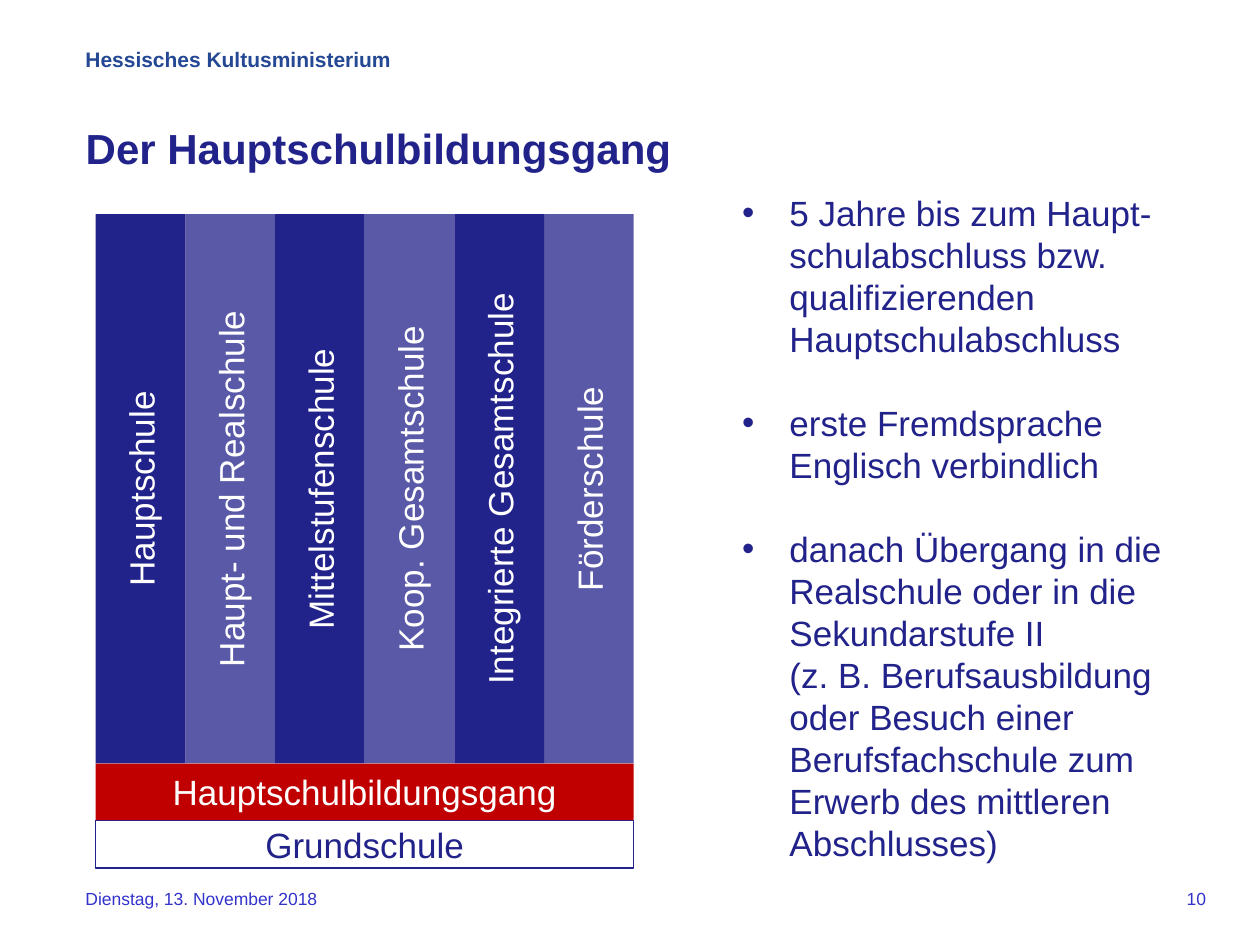
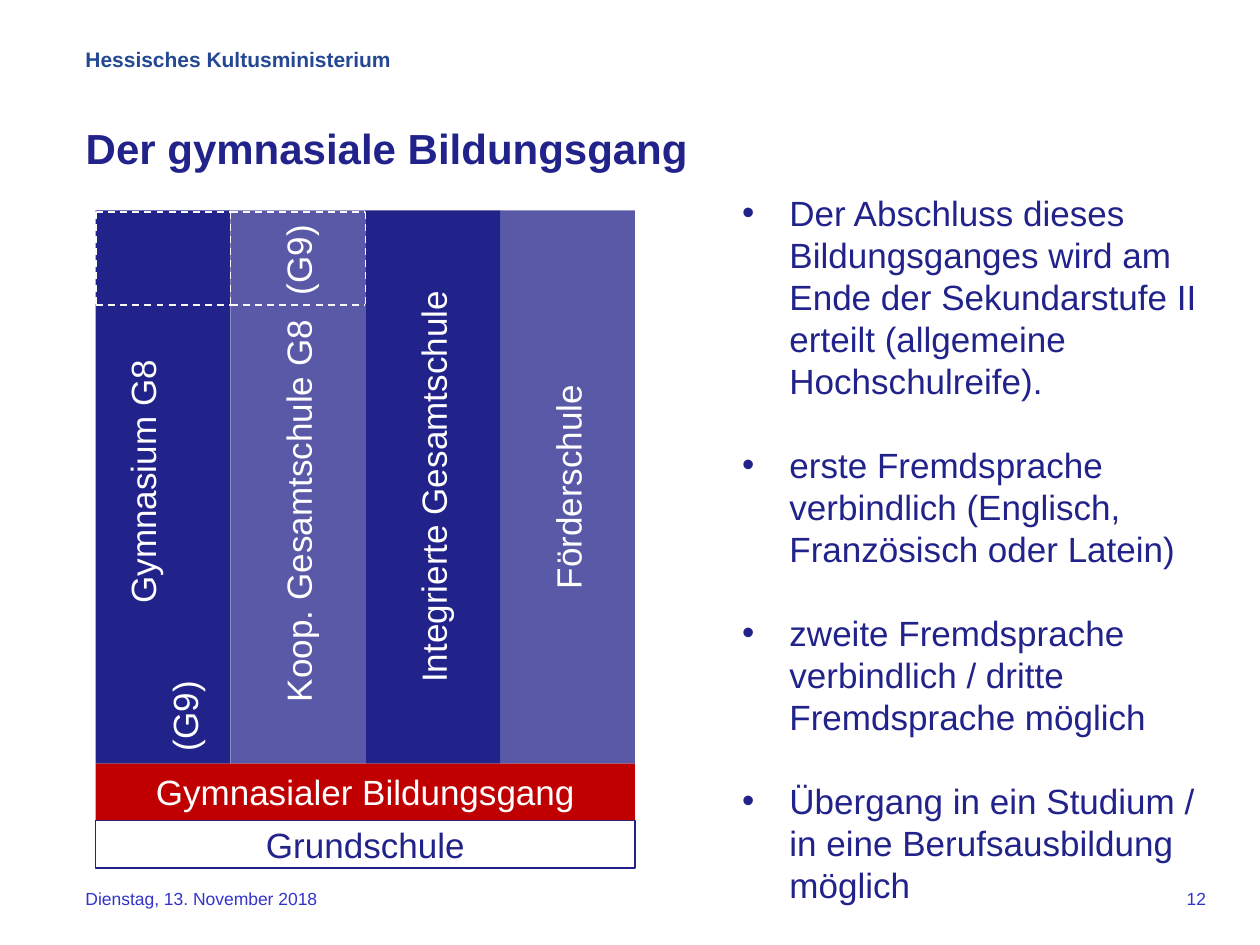
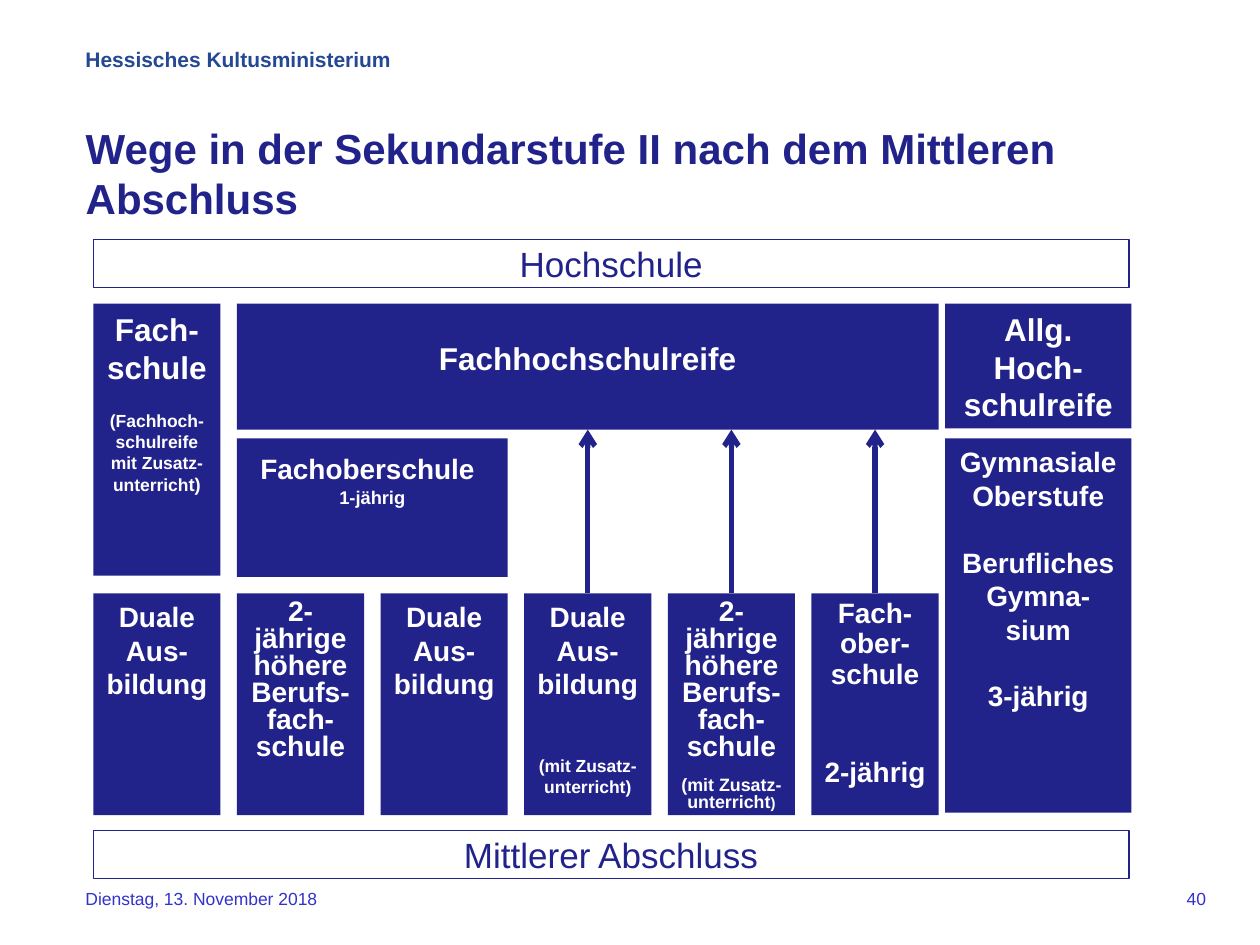
from lxml import etree
from pptx import Presentation
from pptx.dml.color import RGBColor
from pptx.enum.dml import MSO_LINE
from pptx.enum.shapes import MSO_CONNECTOR, MSO_SHAPE
from pptx.enum.text import MSO_ANCHOR, MSO_AUTO_SIZE, PP_ALIGN
from pptx.oxml.ns import qn
from pptx.util import Inches, Pt

LEFT, CENTER, RIGHT = PP_ALIGN.LEFT, PP_ALIGN.CENTER, PP_ALIGN.RIGHT
TOP, MIDDLE = MSO_ANCHOR.TOP, MSO_ANCHOR.MIDDLE
FIXED = MSO_AUTO_SIZE.NONE
RECT = MSO_SHAPE.RECTANGLE
STRAIGHT = MSO_CONNECTOR.STRAIGHT
DASH = MSO_LINE.DASH

HUES = {
    "navy": "22228B",
    "red": "C00000",
    "white": "FFFFFF",
    "head": "244894",
    "foot": "3333CC",
    "dash": "F9F9F9",
}
FONT = "Arial"
BODY = (5.79, 1.47, 3.86, 5.35)


def hue(name):
    return RGBColor.from_string(HUES[name])


def place(shape, box):
    shape.left, shape.top, shape.width, shape.height = map(Inches, box)


def plain(text, size=20):
    return [(0, [(text, size)])]


def set_tabs(para, stops):
    tabs = etree.SubElement(para._p.get_or_add_pPr(), qn("a:tabLst"))
    for stop in stops:
        etree.SubElement(tabs, qn("a:tab"), pos=str(Inches(stop)), algn="l")


def write(frame, paras, color="navy", bold=False, align=LEFT, pitch=None,
          anchor=TOP, stops=()):
    frame.word_wrap = True
    frame.auto_size = FIXED
    frame.vertical_anchor = anchor
    for num, (gap, runs) in enumerate(paras):
        para = frame.add_paragraph() if num else frame.paragraphs[0]
        para.alignment = align
        para.space_before = Pt(gap)
        if pitch:
            para.line_spacing = pitch
        if stops:
            set_tabs(para, stops)
        for text, size in runs:
            for part, line in enumerate(text.split("\n")):
                if part:
                    para.add_line_break()
                run = para.add_run()
                run.text = line
                font = run.font
                font.name, font.size, font.bold = FONT, Pt(size), bold
                font.color.rgb = hue(color)


def label(slide, box, text, size, **style):
    shape = slide.shapes.add_textbox(*map(Inches, box))
    write(shape.text_frame, plain(text, size), **style)


def block(slide, box, paras, fill="navy", edge=None, inset=0.05, **style):
    shape = slide.shapes.add_shape(RECT, *map(Inches, box))
    shape.shadow.inherit = False
    shape.fill.solid()
    shape.fill.fore_color.rgb = hue(fill)
    if edge:
        shape.line.color.rgb = hue(edge)
        shape.line.width = Pt(0.75)
    else:
        shape.line.fill.background()
    shape.text_frame.margin_top = Inches(inset)
    write(shape.text_frame, paras, **{"color": "white", "align": CENTER, **style})
    return shape


def band(slide, box, text):
    block(slide, box, plain(text), "white", "navy", color="navy", anchor=MIDDLE)


def stroke(slide, start, end, color, width):
    line = slide.shapes.add_connector(STRAIGHT, *map(Inches, start + end))
    line.line.color.rgb = hue(color)
    line.line.width = Pt(width)
    etree.SubElement(line.element.spPr, qn("a:effectLst"))
    return line


def dashes(slide, box, cols):
    left, top, width, height = box
    for num in range(cols + 1):
        x = left + num * width
        stroke(slide, (x, top), (x, top + height), "dash", 1).line.dash_style = DASH
    for y in (top, top + height):
        for num in range(cols):
            x = left + num * width
            stroke(slide, (x, y), (x + width, y), "dash", 1).line.dash_style = DASH


def arrow(slide, col, x, top, bottom):
    line = stroke(slide, (x, bottom), (x, top), "navy", 3)
    line.begin_connect(col, 0)
    etree.SubElement(line.element.spPr.find(qn("a:ln")), qn("a:tailEnd"), type="arrow")
    return line


def base(deck, layout, title, page, height=1.25):
    slide = deck.slides.add_slide(deck.slide_layouts[layout])
    head = slide.shapes.title
    place(head, (0.58, 0.92, 8.5, height))
    write(head.text_frame, plain(title, 24), bold=True)
    label(slide, (0.58, 0.32, 3.17, 0.5), "Hessisches Kultusministerium", 12,
          color="head", bold=True)
    label(slide, (0.58, 7, 3.22, 0.42), "Dienstag, 13. November 2018", 10, color="foot")
    label(slide, (7.17, 7, 2.5, 0.33), page, 10, color="foot", align=RIGHT)
    return slide


def points(slide, box, items):
    body = slide.placeholders[1]
    place(body, box)
    write(body.text_frame, [(24 if num else 0, [(item, 20)])
                            for num, item in enumerate(items)])


def stack(slide, box, track, bars):
    left, top, width, height = box
    floor, course = 0.38, 0.45
    tall = height - floor - course
    step = width / len(bars)
    for num, (paras, stops) in enumerate(bars):
        bar = block(slide, (left + num * step, top, step, tall), paras,
                    align=LEFT if stops else CENTER, anchor=MIDDLE, stops=stops)
        bar.element.txBody.bodyPr.set("vert", "vert270")
        if num % 2:
            tint = next(bar.element.spPr.iter(qn("a:srgbClr")))
            etree.SubElement(tint, qn("a:alpha"), val="75000")
    band(slide, (left, top + height - floor, width, floor), "Grundschule")
    block(slide, (left, top + tall, width, course), plain(track), "red", anchor=MIDDLE)
    return step


def main_track(deck):
    slide = base(deck, 1, "Der Hauptschulbildungsgang", "10", 0.55)
    points(slide, BODY, [
        "5 Jahre bis zum Haupt-schulabschluss bzw. qualifizierenden Hauptschulabschluss",
        "erste Fremdsprache Englisch verbindlich",
        "danach Übergang in die Realschule oder in die Sekundarstufe II \n"
        "(z. B. Berufsausbildung oder Besuch einer Berufsfachschule zum "
        "Erwerb des mittleren Abschlusses)",
    ])
    names = ["Hauptschule", "Haupt- und Realschule", "Mittelstufenschule",
             "Koop. Gesamtschule", "Integrierte Gesamtschule", "Förderschule"]
    stack(slide, (0.76, 1.7, 4.27, 5.19), "Hauptschulbildungsgang",
          [(plain(name), ()) for name in names])


def upper_track(deck):
    slide = base(deck, 1, "Der gymnasiale Bildungsgang", "12")
    points(slide, BODY[:3] + (5.82,), [
        "Der Abschluss dieses Bildungsganges wird am Ende der Sekundarstufe II "
        "erteilt (allgemeine Hochschulreife).",
        "erste Fremdsprache verbindlich (Englisch, Französisch oder Latein)",
        "zweite Fremdsprache verbindlich / dritte Fremdsprache möglich",
        "Übergang in ein Studium / in eine Berufsausbildung möglich",
    ])
    left, top = 0.76, 1.67
    step = stack(slide, (left, top, 4.28, 5.22), "Gymnasialer Bildungsgang", [
        (plain("\tGymnasium G8") + plain("(G9)"), (1.17,)),
        (plain("\tKoop. Gesamtschule G8\t(G9)"), (0.39, 3.62)),
        (plain("Integrierte Gesamtschule"), ()),
        (plain("Förderschule"), ()),
    ])
    dashes(slide, (left, top + 0.01, step, 0.74), 2)


def routes(slide, box):
    left, top, width, height = box
    step, wide, thick = 1.14, 1.01, 0.38
    row, low, base_y = top + 0.51, top + 1.58, top + 2.81
    deep = 1.76
    far = left + 6.76
    side = 1.48
    style = {"bold": True}

    for y, text in ((top, "Hochschule"),
                    (top + height - thick, "Mittlerer Abschluss")):
        band(slide, (left, y, width, thick), text)

    block(slide, (left, row, wide, 2.16), [
        (0, [("Fach-schule", 18)]),
        (14, [("(Fachhoch-schulreife mit Zusatz-unterrich", 10), ("t)", 10.5)]),
    ], **style)
    goal = block(slide, (left + step, row, 4 * step + wide, 1),
                 plain("Fachhochschulreife", 18), inset=0.28, **style)
    block(slide, (left + step, low, step + wide, 1.1), [
        (0, [("Fachoberschule", 16), (" ", 20)]),
        (0, [("1-jährig", 10.5)]),
    ], **style)
    block(slide, (far, row, side, 0.99), plain("Allg. Hoch-schulreife", 18), **style)
    block(slide, (far, low, side, 2.97), [
        (0, [("Gymnasiale Oberstufe", 16)]),
        (19, [("Berufliches Gymna-sium", 16)]),
        (19, [("3-jährig", 16)]),
    ], **style)

    dual = plain("Duale Aus-bildung", 16)
    higher = plain("2-jährige höhere Berufs-fach-schule", 16.1)
    cols = [
        (dual, None),
        (higher, 0.8),
        (dual, None),
        (dual + [(31, [("(mit Zusatz-unterricht)", 10)])], None),
        (higher + [(9, [("(mit Zusatz-unterricht", 10.2), (")", 8.5)])], 0.8),
        (plain("Fach-ober-schule", 16) + [(39, [("2-jährig", 16)])], 0.9),
    ]
    for num, (paras, pitch) in enumerate(cols):
        x = left + num * step
        col = block(slide, (x, base_y, wide, deep), paras, pitch=pitch, **style)
        if num >= 3:
            line = arrow(slide, col, x + wide / 2, row + 1, base_y)
            if num == 3:
                line.end_connect(goal, 2)


def paths(deck):
    slide = base(deck, 5, "Wege in der Sekundarstufe II nach dem Mittleren Abschluss", "40")
    routes(slide, (0.74, 1.9, 8.22, 5.07))


def main():
    deck = Presentation()
    deck.slide_width, deck.slide_height = Inches(10), Inches(7.5)
    main_track(deck)
    upper_track(deck)
    paths(deck)
    deck.save("out.pptx")


if __name__ == "__main__":
    main()
